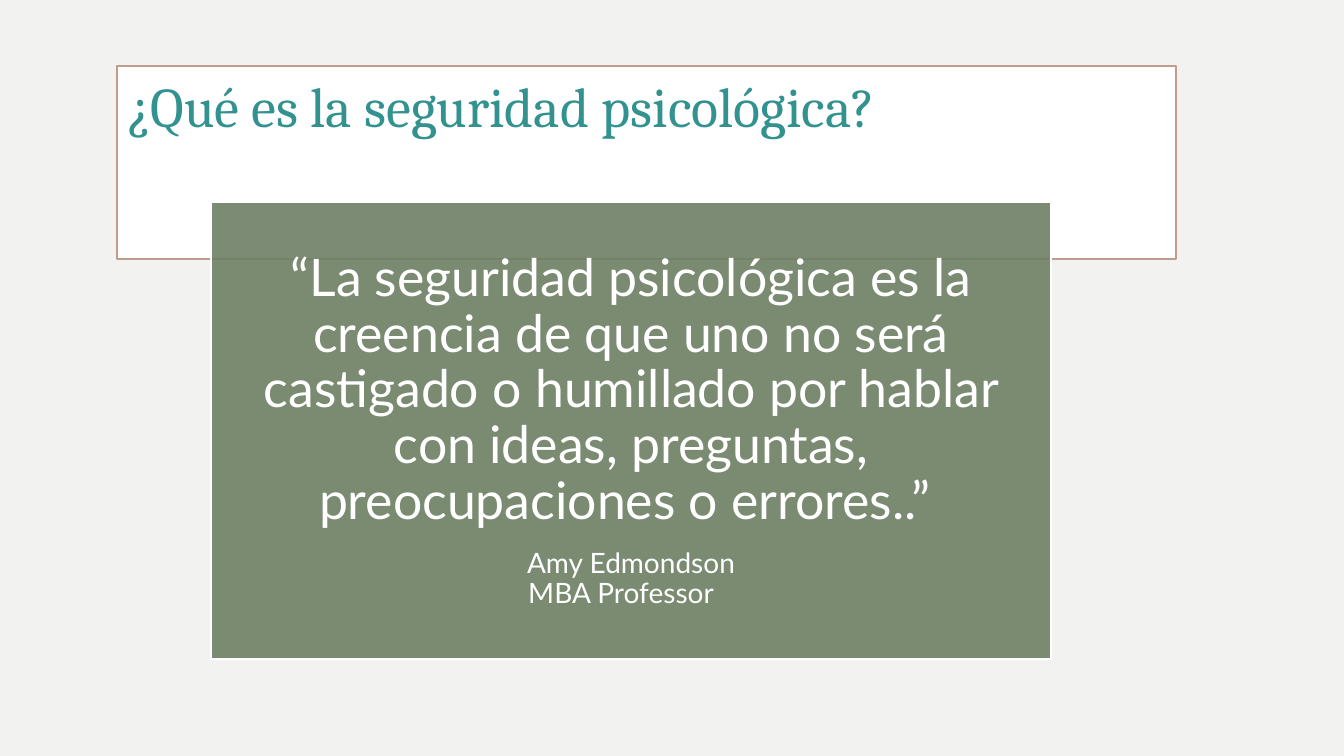
from lxml.etree import SubElement
from pptx import Presentation
from pptx.dml.color import RGBColor
from pptx.enum.shapes import MSO_SHAPE as Shape
from pptx.enum.text import MSO_ANCHOR as Anchor, MSO_AUTO_SIZE as AutoSize, PP_ALIGN as Align
from pptx.oxml.ns import qn
from pptx.util import Pt

EMU_PER_PX = 914400 / 100.8

PAPER = RGBColor(0xF2, 0xF2, 0xF0)
WHITE = RGBColor(0xFF, 0xFF, 0xFF)
TEAL = RGBColor(0x32, 0x92, 0x8F)
CLAY = RGBColor(0xC1, 0x9C, 0x8D)
OLIVE = RGBColor(0x6E, 0x80, 0x65)


def px(length):
    return round(length * EMU_PER_PX)


def set_opacity(fill, percent):
    color = fill._xPr.find(qn("a:solidFill"))[0]
    SubElement(color, qn("a:alpha"), val=str(percent * 1000))


def paint(box, fill, line):
    box.fill.solid()
    box.fill.fore_color.rgb = fill
    box.line.color.rgb = line
    box.line.width = Pt(1.5)


def style_text(para, font, size, color, align):
    para.alignment = align
    for span in para.runs:
        span.font.name = font
        span.font.size = Pt(size)
        span.font.color.rgb = color


def add_title(page, text, left, top, width, height):
    title = page.shapes.title
    title.left, title.top, title.width, title.height = map(px, (left, top, width, height))
    paint(title, WHITE, CLAY)
    frame = title.text_frame
    frame.text = text
    frame.auto_size = AutoSize.NONE
    frame.vertical_anchor = Anchor.TOP
    style_text(frame.paragraphs[0], "Cambria", 40, TEAL, Align.LEFT)


def add_quote(page, quote, author, role, left, top, width, height):
    box = page.shapes.add_shape(Shape.RECTANGLE, *map(px, (left, top, width, height)))
    box.shadow.inherit = False
    paint(box, OLIVE, WHITE)
    set_opacity(box.fill, 90)
    frame = box.text_frame
    frame.word_wrap = True
    frame.vertical_anchor = Anchor.MIDDLE
    frame.margin_left = frame.margin_right = px(15)
    frame.margin_top = frame.margin_bottom = px(15)
    frame.text = "\n".join((quote, author, role))
    for para, size in zip(frame.paragraphs, (37, 20, 20)):
        style_text(para, "Lato", size, WHITE, Align.CENTER)
        para.line_spacing = 0.9
    frame.paragraphs[0].space_after = Pt(13)
    # The role sits slightly left of the author's name.
    frame.paragraphs[2]._p.get_or_add_pPr().set("marR", str(px(20)))


def main():
    deck = Presentation()
    deck.slide_width, deck.slide_height = px(1344), px(756)
    page = deck.slides.add_slide(deck.slide_layouts.get_by_name("Title Only"))
    page.background.fill.solid()
    page.background.fill.fore_color.rgb = PAPER
    add_title(page, "¿Qué es la seguridad psicológica?", 117, 66, 1059, 193)
    add_quote(
        page,
        "“La seguridad psicológica es la creencia de que uno no será castigado "
        "o humillado por hablar con ideas, preguntas, preocupaciones o errores..” ",
        "Amy Edmondson",
        "MBA Professor",
        211, 202, 840, 457,
    )
    deck.save("out.pptx")


if __name__ == "__main__":
    main()
